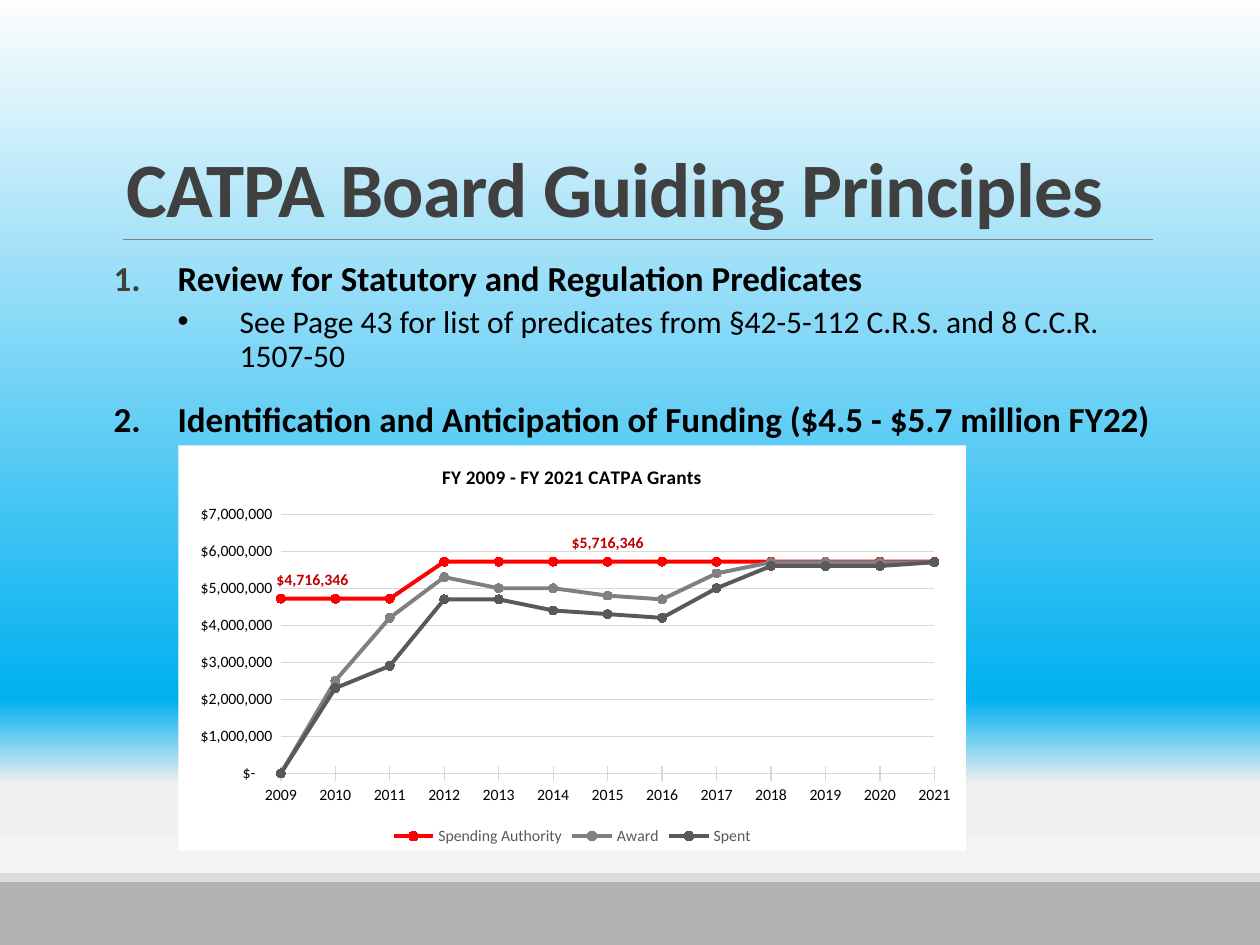
from lxml.etree import SubElement
from pptx import Presentation
from pptx.chart.data import CategoryChartData as Data
from pptx.dml.color import RGBColor as RGB
from pptx.enum.chart import XL_LABEL_POSITION as Spot
from pptx.enum.chart import XL_LEGEND_POSITION as Side
from pptx.enum.chart import XL_CHART_TYPE as Kind
from pptx.enum.chart import XL_MARKER_STYLE as Mark
from pptx.enum.chart import XL_TICK_MARK as Tick
from pptx.enum.shapes import MSO_CONNECTOR as Link
from pptx.enum.shapes import MSO_SHAPE as Form
from pptx.enum.text import MSO_ANCHOR as Anchor
from pptx.enum.text import MSO_AUTO_SIZE as Fit
from pptx.enum.text import PP_ALIGN as Align
from pptx.oxml import parse_xml
from pptx.oxml.ns import nsdecls, qn
from pptx.util import Pt

BLACK = RGB(0x00, 0x00, 0x00)
WHITE = RGB(0xFF, 0xFF, 0xFF)
DARK = RGB(0x40, 0x40, 0x40)
SLATE = RGB(0x59, 0x59, 0x59)
GRAY = RGB(0x80, 0x80, 0x80)
SILVER = RGB(0xB2, 0xB2, 0xB2)
PALE = RGB(0xDD, 0xDD, 0xDD)
GRID = RGB(0xD9, 0xD9, 0xD9)
RED = RGB(0xFF, 0x00, 0x00)
BRICK = RGB(0xC0, 0x00, 0x00)
SKY = [(0, "FDFDFD"), (74, "00B0F0"), (83, "F0F0F0"), (100, "F5F5F5")]
MONEY = '_("$"* #,##0_);_("$"* \\(#,##0\\);_("$"* "-"??_);_(@_)'

YEARS = [str(year) for year in range(2009, 2022)]
SERIES = [
    ("Spending Authority", RED, [4716346] * 3 + [5716346] * 10),
    ("Award", GRAY, [0, 2500000, 4200000, 5300000, 5000000, 5000000, 4800000,
                     4700000, 5400000] + [5700000] * 4),
    ("Spent", SLATE, [0, 2300000, 2900000, 4700000, 4700000, 4400000, 4300000,
                      4200000, 5000000, 5600000, 5600000, 5600000, 5700000]),
]
# Text, number (None for a bullet), number colour
ITEMS = [
    ("Review for Statutory and Regulation Predicates", 1, DARK),
    ("See Page 43 for list of predicates from §42-5-112 C.R.S. and 8 C.C.R. 1507-50",
     None, BLACK),
    ("Identification and Anticipation of Funding ($4.5 - $5.7 million FY22)", 2, BLACK),
]


def layout(x, y, w=None, h=None):
    """Manual chart layout; without a size it is an offset."""
    parts = [("x", x), ("y", y)]
    modes = ""
    if w:
        parts += [("w", w), ("h", h)]
        modes = ('<c:layoutTarget val="inner"/><c:xMode val="edge"/>'
                 '<c:yMode val="edge"/>')
    body = "".join(f'<c:{tag} val="{val}"/>' for tag, val in parts)
    return parse_xml(f'<c:layout {nsdecls("c")}><c:manualLayout>{modes}{body}'
                     '</c:manualLayout></c:layout>')


class Deck:
    face = "Calibri"

    def __init__(self):
        self.prs = Presentation()
        self.prs.slide_width, self.prs.slide_height = Pt(720), Pt(540)
        self.slide = self.prs.slides.add_slide(self.prs.slide_layouts[1])

    def style(self, font, size, color, bold=False):
        font.name, font.size, font.bold = self.face, Pt(size), bold
        font.color.rgb = color

    def place(self, shape, x, y, w, h):
        shape.left, shape.top, shape.width, shape.height = Pt(x), Pt(y), Pt(w), Pt(h)

    def sky(self, stops):
        fill = self.slide.background.fill
        fill.gradient()
        grad = self.slide.background._cSld.find(".//" + qn("a:gradFill"))
        for part in list(grad):
            grad.remove(part)
        group = SubElement(grad, qn("a:gsLst"))
        for pos, color in stops:
            stop = SubElement(group, qn("a:gs"), pos=str(pos * 1000))
            SubElement(stop, qn("a:srgbClr"), val=color)
        SubElement(grad, qn("a:lin"), ang="5400000", scaled="0")

    def band(self, x, y, w, h, color):
        box = self.slide.shapes.add_shape(Form.RECTANGLE, Pt(x), Pt(y), Pt(w), Pt(h))
        box.shadow.inherit = False
        box.fill.solid()
        box.fill.fore_color.rgb = color
        box.line.fill.background()

    def rule(self, x1, y1, x2, y2):
        line = self.slide.shapes.add_connector(
            Link.STRAIGHT, Pt(x1), Pt(y1), Pt(x2), Pt(y2))
        line.line.color.rgb, line.line.width = GRAY, Pt(0.5)
        SubElement(line._element.spPr, qn("a:effectLst"))

    def title(self, text, x, y, w, h):
        shape = self.slide.shapes.title
        self.place(shape, x, y, w, h)
        frame = shape.text_frame
        frame.text = text
        frame.auto_size, frame.vertical_anchor = Fit.NONE, Anchor.BOTTOM
        para = frame.paragraphs[0]
        para.alignment, para.line_spacing = Align.LEFT, 0.85
        run = para.runs[0]
        self.style(run.font, 44, DARK, True)
        run.font._element.set("spc", "-50")

    def items(self, rows, x, y, w, h):
        shape = self.slide.placeholders[1]
        self.place(shape, x, y, w, h)
        frame = shape.text_frame
        frame.text = "\n".join(text for text, _, _ in rows)
        frame.auto_size, frame.vertical_anchor = Fit.NONE, Anchor.TOP
        frame.margin_left = frame.margin_right = 0
        for i, (para, (_, num, color)) in enumerate(zip(frame.paragraphs, rows)):
            sub = num is None
            para.level = int(sub)
            props = para._p.get_or_add_pPr()
            props.set("marL", str(Pt(72 if sub else 36.5)))
            props.set("indent", str(Pt(-35.5 if sub else -36.5)))
            tint = SubElement(props, qn("a:buClr"))
            SubElement(tint, qn("a:srgbClr"), val=str(color))
            if sub:
                SubElement(props, qn("a:buFont"), typeface="Arial")
                SubElement(props, qn("a:buChar"), char="•")
            else:
                SubElement(props, qn("a:buFont"), typeface=self.face)
                SubElement(props, qn("a:buAutoNum"), type="arabicPeriod",
                           startAt=str(num))
            para.line_spacing = 0.9
            para.space_before = Pt(0 if i == 0 else 2 if sub else 12)
            para.space_after = Pt(4 if sub else 2)
            self.style(para.runs[0].font, 18 if sub else 20, BLACK, not sub)

    def chart(self, title, x, y, w, h):
        data = Data(number_format=MONEY)
        data.categories = YEARS
        for name, _, vals in SERIES:
            data.add_series(name, vals)
        chart = self.slide.shapes.add_chart(
            Kind.LINE_MARKERS, Pt(x), Pt(y), Pt(w), Pt(h), data).chart
        self.style(chart.font, 10, BLACK)
        root = chart._chartSpace
        root.find(qn("c:chart")).addnext(parse_xml(
            f'<c:spPr {nsdecls("c", "a")}><a:solidFill><a:srgbClr val="{WHITE}"/>'
            '</a:solidFill><a:ln><a:noFill/></a:ln></c:spPr>'))
        area = root.find(".//" + qn("c:plotArea"))
        for old in area.findall(qn("c:layout")):
            area.remove(old)
        area.insert(0, layout(0.13, 0.17, 0.83, 0.64))

        # Title and legend
        chart.has_title = True
        frame = chart.chart_title.text_frame
        frame.text = title
        self.style(frame.paragraphs[0].runs[0].font, 11, BLACK, True)
        chart.chart_title.include_in_layout = False
        chart.has_legend = True
        chart.legend.position = Side.BOTTOM
        chart.legend.include_in_layout = False
        self.style(chart.legend.font, 9, SLATE)

        # Axes
        cat, val = chart.category_axis, chart.value_axis
        for axis in (cat, val):
            self.style(axis.tick_labels.font, 9, BLACK)
        cat.major_tick_mark = Tick.CROSS
        cat.format.line.color.rgb, cat.format.line.width = GRID, Pt(0.75)
        val.major_tick_mark = Tick.NONE
        val.format.line.fill.background()
        val.minimum_scale, val.maximum_scale, val.major_unit = 0, 7000000, 1000000
        val.tick_labels.number_format = MONEY
        val.tick_labels.number_format_is_linked = False
        grid = val.major_gridlines.format.line
        grid.color.rgb, grid.width = GRID, Pt(0.75)
        area.find(".//" + qn("c:majorUnit")).addprevious(
            parse_xml(f'<c:crossBetween {nsdecls("c")} val="midCat"/>'))

        # Lines and markers
        plot = chart.plots[0]
        plot.vary_by_categories = False
        for line, (_, color, _) in zip(plot.series, SERIES):
            line.smooth = False
            line.format.line.color.rgb, line.format.line.width = color, Pt(2.25)
            line.marker.style, line.marker.size = Mark.CIRCLE, 5
            line.marker.format.fill.solid()
            line.marker.format.fill.fore_color.rgb = color
            line.marker.format.line.color.rgb = color

        # Labels where the spending authority level is named
        top = plot.series[0]
        for i in (0, 6):
            label = top.points[i].data_label
            self.style(label.font, 9, BRICK, True)
            label.position = Spot.ABOVE
        first = top._element.find(".//" + qn("c:dLbl"))
        first.find(qn("c:idx")).addnext(layout(0.04, 0))


def main():
    deck = Deck()
    deck.sky(SKY)
    deck.band(0, 504, 720, 36, SILVER)
    deck.band(0, 499, 720, 5, PALE)
    deck.rule(70.5, 136.8, 659, 136.8)
    deck.title("CATPA Board Guiding Principles", 65, 22.5, 594, 114.3)
    deck.items(ITEMS, 65, 145.5, 594, 317)
    deck.chart("FY 2009 - FY 2021 CATPA Grants", 102, 254.5, 450, 231.5)
    deck.prs.save("out.pptx")


if __name__ == "__main__":
    main()
